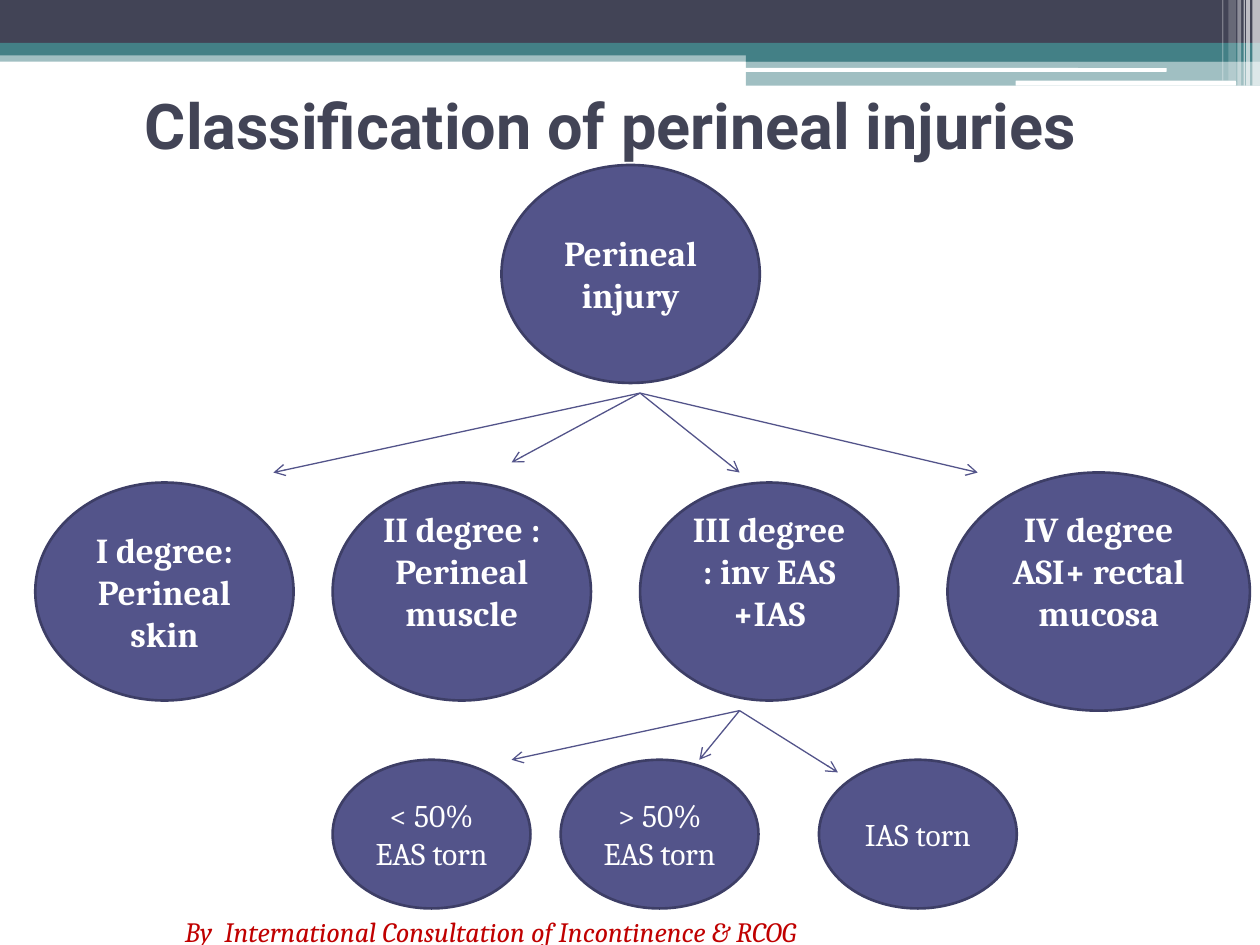
from pptx import Presentation
from pptx.util import Inches, Pt
from pptx.dml.color import RGBColor
from pptx.enum.shapes import MSO_CONNECTOR, MSO_SHAPE
from pptx.enum.text import MSO_ANCHOR, PP_ALIGN
from pptx.oxml.ns import qn
from lxml import etree

RECT, ROUND, OVAL = MSO_SHAPE.RECTANGLE, MSO_SHAPE.ROUNDED_RECTANGLE, MSO_SHAPE.OVAL
LINE = MSO_CONNECTOR.STRAIGHT
TOP, MIDDLE = MSO_ANCHOR.TOP, MSO_ANCHOR.MIDDLE
LEFT, CENTER, RIGHT = PP_ALIGN.LEFT, PP_ALIGN.CENTER, PP_ALIGN.RIGHT

THEME = {
    "dark": "424456", "teal": "438086", "white": "FFFFFF", "node": "53548A",
    "edge": "3D3E66", "red": "C00000", "head": "Roboto", "body": "Cambria",
    "title": 36, "big": 20, "small": 18, "note": 16,
}

TITLE = "Classification of perineal injuries"
NOTE = "By  International Consultation of Incontinence & RCOG"
ROOT = ["Perineal injury"]
GRADES = [
    (["I degree:", "Perineal skin"], 0.28, 0),
    (["II degree :", "Perineal muscle"], 2.64, 0.33),
    (["III degree : inv EAS +IAS"], 5.08, 0.33),
]
LAST = ["IV degree ASI+ rectal mucosa"]
TEARS = [("< 50% EAS torn", 2.64), ("> 50% EAS torn", 4.45), ("IAS torn", 6.5)]
FANS = [
    ((5.08, 3.12), [(7.76, 3.75), (5.87, 3.75), (4.06, 3.67), (2.17, 3.75)]),
    ((5.87, 5.64), [(6.65, 6.13), (5.55, 6.03), (4.06, 6.03)]),
]
BANDS = [
    (RECT, 0, 0.4, 10, 0.09, "teal", 50),
    (RECT, 0, 0, 10, 0.34, "dark", 100),
    (RECT, 0, 0.34, 10, 0.1, "teal", 100),
    (RECT, 5.92, 0.39, 4.08, 0.1, "teal", 100),
    (RECT, 5.92, 0.48, 4.08, 0.2, "teal", 50),
    (ROUND, 5.91, 0.54, 3.35, 0.03, "white", 100),
    (ROUND, 8.06, 0.64, 1.75, 0.04, "white", 100),
]
STRIPES = [
    (9.94, 0.06, 0.68, 65), (9.89, 0.03, 0.68, 65), (9.87, 0.01, 0.68, 60),
    (9.82, 0.03, 0.68, 40), (9.75, 0.06, 0.64, 20), (9.7, 0.01, 0.64, 30),
]


def color(name):
    return RGBColor.from_string(THEME[name])


def write(shape, lines, size="big", font="body", ink="white", bold=False,
          italic=False, align=CENTER, anchor=MIDDLE, indent=0, lift=0):
    frame = shape.text_frame
    frame.word_wrap = True
    frame.vertical_anchor = anchor
    frame.margin_left = Inches(0.1 + indent)
    frame.margin_bottom = Inches(0.05 + lift)
    for i, line in enumerate(lines):
        para = frame.add_paragraph() if i else frame.paragraphs[0]
        para.alignment = align
        run = para.add_run()
        run.text = line
        run.font.size = Pt(THEME[size])
        run.font.name = THEME[font]
        run.font.color.rgb = color(ink)
        run.font.bold = bold
        run.font.italic = italic


def block(slide, kind, x, y, w, h, fill, alpha=100):
    shape = slide.shapes.add_shape(kind, Inches(x), Inches(y), Inches(w), Inches(h))
    shape.shadow.inherit = False
    shape.fill.solid()
    shape.fill.fore_color.rgb = color(fill)
    shape.line.fill.background()
    if alpha < 100:
        tint = shape.fill._xPr.find(qn("a:solidFill"))[0]
        etree.SubElement(tint, qn("a:alpha")).set("val", str(alpha * 1000))
    return shape


def node(slide, lines, x, y, w, h, **style):
    shape = block(slide, OVAL, x, y, w, h, "node")
    shape.line.color.rgb = color("edge")
    shape.line.width = Pt(1.5)
    write(shape, lines, **style)


def arrow(slide, start, end):
    link = slide.shapes.add_connector(LINE, *map(Inches, start + end))
    link.line.color.rgb = color("node")
    link.line.width = Pt(0.75)
    etree.SubElement(link.line._get_or_add_ln(), qn("a:tailEnd")).set("type", "arrow")
    etree.SubElement(link._element.spPr, qn("a:effectLst"))


def label(slide, text, x, y, w, h, **style):
    box = slide.shapes.add_textbox(Inches(x), Inches(y), Inches(w), Inches(h))
    write(box, [text], **style)


def main():
    deck = Presentation()
    deck.slide_width, deck.slide_height = Inches(10), Inches(7.5)
    slide = deck.slides.add_slide(deck.slide_layouts[6])
    for band in BANDS:
        block(slide, *band)
    for x, w, h, alpha in STRIPES:
        block(slide, RECT, x, 0, w, h, "white", alpha)
    label(slide, TITLE, 0.17, 0.52, 9, 0.94, size="title", font="head",
          ink="dark", bold=True, align=LEFT, indent=0.88)
    node(slide, ROOT, 3.98, 1.31, 2.05, 1.73, bold=True)
    for lines, x, lift in GRADES:
        node(slide, lines, x, 3.83, 2.05, 1.73, bold=True, lift=lift)
    node(slide, LAST, 7.52, 3.75, 2.4, 1.89, bold=True, lift=0.33)
    for text, x in TEARS:
        node(slide, [text], x, 6.03, 1.57, 1.18, size="small")
    for start, ends in FANS:
        for end in ends:
            arrow(slide, start, end)
    label(slide, NOTE, 0.28, 7.21, 6.14, 0.29, size="note", ink="red",
          italic=True, align=RIGHT, anchor=TOP)
    deck.save("out.pptx")


if __name__ == "__main__":
    main()
